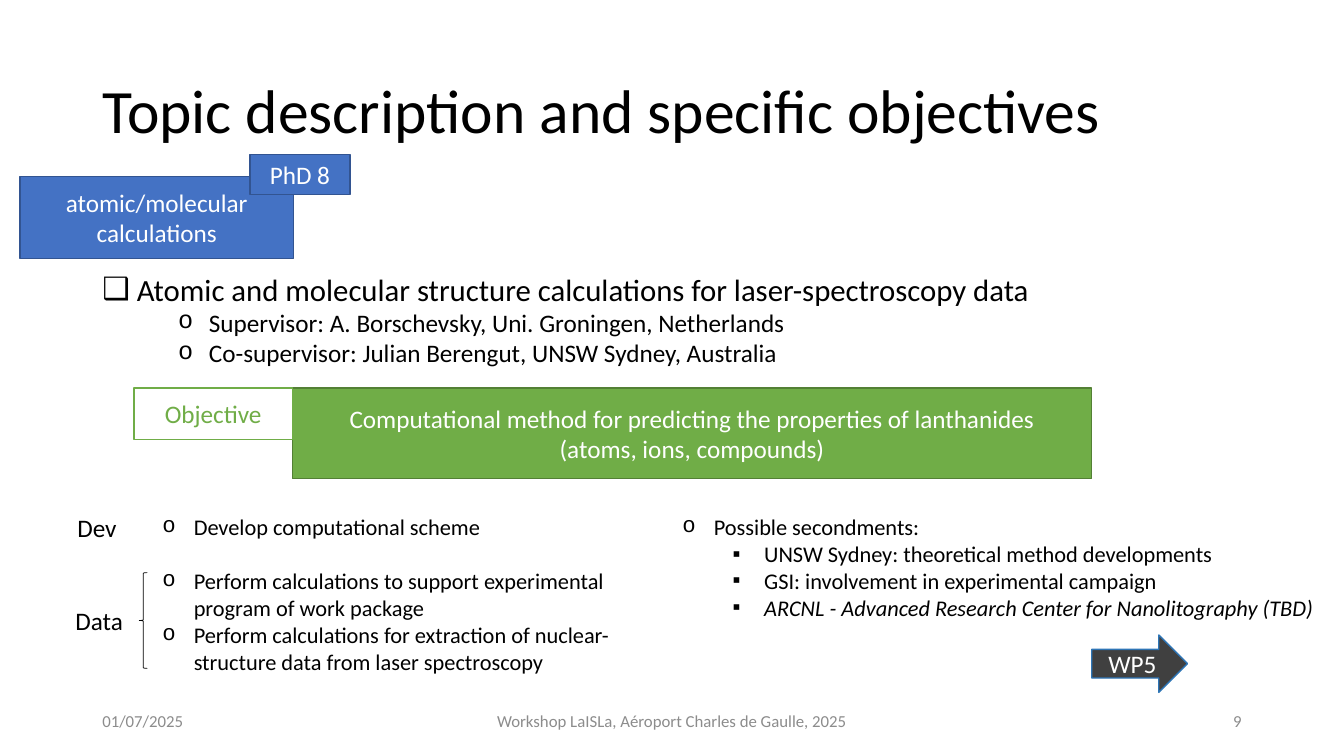
from lxml.etree import SubElement
from pptx import Presentation
from pptx.dml.color import RGBColor
from pptx.enum.shapes import MSO_SHAPE
from pptx.enum.text import MSO_ANCHOR, MSO_AUTO_SIZE, PP_ALIGN
from pptx.oxml.ns import qn
from pptx.util import Pt

BLACK = RGBColor(0x00, 0x00, 0x00)
WHITE = RGBColor(0xFF, 0xFF, 0xFF)
GREY = RGBColor(0x8C, 0x8C, 0x8C)
DARK = RGBColor(0x40, 0x40, 0x40)
BLUE = RGBColor(0x44, 0x72, 0xC4)
NAVY = RGBColor(0x32, 0x54, 0x91)
SKY = RGBColor(0x2E, 0x75, 0xB6)
GREEN = RGBColor(0x70, 0xAD, 0x47)
MOSS = RGBColor(0x53, 0x80, 0x35)

LEFT, CENTER, RIGHT = PP_ALIGN.LEFT, PP_ALIGN.CENTER, PP_ALIGN.RIGHT
TOP, MIDDLE = MSO_ANCHOR.TOP, MSO_ANCHOR.MIDDLE

# Bullet styles: mark, mark font, text indent, hang, text size
HEAD = ("❑", "Arial", 24.5, 24.5, 22)
PERSON = ("o", "Courier New", 76, 22, 18)
ITEM = ("o", "Courier New", 22.5, 22.5, 16)
SUB = ("▪", "Arial", 58.5, 22.5, 16)

TOPIC = [
    (HEAD, "Atomic and molecular structure calculations for laser-spectroscopy data"),
    (PERSON, "Supervisor: A. Borschevsky, Uni. Groningen, Netherlands"),
    (PERSON, "Co-supervisor: Julian Berengut, UNSW Sydney, Australia"),
]
TASKS = [
    (ITEM, "Develop computational scheme"),
    (ITEM, "Perform calculations to support experimental program of work package"),
    (ITEM, "Perform calculations for extraction of nuclear-structure data from laser spectroscopy"),
]
VISITS = [
    (ITEM, "Possible secondments:"),
    (SUB, "UNSW Sydney: theoretical method developments"),
    (SUB, "GSI: involvement in experimental campaign"),
    (SUB, "ARCNL - Advanced Research Center for Nanolitography (TBD)"),
]


def place(shape, box):
    shape.left, shape.top, shape.width, shape.height = map(Pt, box)


def style(para, size, color, align=LEFT):
    para.alignment = align
    para.space_before = Pt(0)
    for run in para.runs:
        font = run.font
        font.name, font.size, font.bold = "Calibri", Pt(size), False
        font.color.rgb = color


def write(shape, text, size, color, align=LEFT, anchor=MIDDLE, wrap=True):
    frame = shape.text_frame
    frame.text = text
    frame.word_wrap = wrap
    frame.auto_size = MSO_AUTO_SIZE.NONE
    frame.vertical_anchor = anchor
    for para in frame.paragraphs:
        style(para, size, color, align)


def add_label(slide, box, text, size=18, color=BLACK, align=LEFT, anchor=MIDDLE, wrap=True):
    label = slide.shapes.add_textbox(*map(Pt, box))
    write(label, text, size, color, align, anchor, wrap)


def add_block(slide, box, text, fill, line, color=WHITE, kind=MSO_SHAPE.RECTANGLE):
    block = slide.shapes.add_shape(kind, *map(Pt, box))
    block.shadow.inherit = False
    block.fill.solid()
    block.fill.fore_color.rgb = fill
    block.line.color.rgb = line
    block.line.width = Pt(1)
    write(block, text, 18, color, CENTER)


def add_brace(slide, box):
    brace = slide.shapes.add_shape(MSO_SHAPE.LEFT_BRACE, *map(Pt, box))
    brace.shadow.inherit = False
    brace.fill.background()
    brace.line.color.rgb = BLACK
    brace.line.width = Pt(0.5)


def set_bullet(para, mark, face, indent, hang):
    props = para._p.get_or_add_pPr()
    props.set("marL", str(Pt(indent)))
    props.set("indent", str(-Pt(hang)))
    SubElement(props, qn("a:buFont"), typeface=face)
    SubElement(props, qn("a:buChar"), char=mark)


def fill_list(holder, box, items):
    place(holder, box)
    frame = holder.text_frame
    frame.text = "\n".join(text for _, text in items)
    frame.word_wrap = True
    frame.auto_size = MSO_AUTO_SIZE.NONE
    frame.vertical_anchor = TOP
    for para, (kind, _) in zip(frame.paragraphs, items):
        *bullet, size = kind
        para.level = 1 if kind in (PERSON, SUB) else 0
        style(para, size, BLACK)
        set_bullet(para, *bullet)
    return frame.paragraphs


def main():
    deck = Presentation()
    deck.slide_width, deck.slide_height = Pt(960), Pt(540)
    slide = deck.slides.add_slide(deck.slide_layouts.get_by_name("Comparison"))
    title, topic, tasks, spare, visits = slide.placeholders
    spare.element.getparent().remove(spare.element)

    place(title, (66, 28.8, 828, 104.4))
    write(title, "Topic description and specific objectives", 44, BLACK)
    title.text_frame.paragraphs[0].line_spacing = 0.9

    fill_list(topic, (66, 189.4, 756.7, 78.5), TOPIC)
    steps = fill_list(tasks, (108.7, 362.9, 371.5, 123.8), TASKS)
    steps[1].space_before = Pt(19.5)
    stays = fill_list(visits, (480.2, 362.9, 467.3, 85), VISITS)
    stays[-1].runs[0].font.italic = True

    add_block(slide, (14.4, 126.2, 195.1, 58.3), "atomic/molecular calculations", BLUE, NAVY)
    add_block(slide, (178.6, 110.2, 71.3, 28.8), "PhD 8", BLUE, NAVY)
    goal = "Computational method for predicting the properties of lanthanides\v(atoms, ions, compounds)"
    add_block(slide, (208.8, 277.2, 571, 64.8), goal, GREEN, MOSS)
    add_block(slide, (95.8, 277.2, 113, 36.7), "Objective", WHITE, GREEN, GREEN)
    add_block(slide, (779.8, 453.6, 68.4, 41), "WP5", DARK, SKY, kind=MSO_SHAPE.RIGHT_ARROW)

    add_brace(slide, (99.4, 409, 5.8, 68.4))
    add_label(slide, (48.2, 362.2, 43.2, 28.8), "Dev", anchor=TOP, wrap=False)
    add_label(slide, (46.8, 429.1, 49, 28.8), "Data", anchor=TOP, wrap=False)

    for left, width, text, align in (
        (66, 216, "01/07/2025", LEFT),
        (318, 324, "Workshop LaISLa, Aéroport Charles de Gaulle, 2025", CENTER),
        (678, 216, "9", RIGHT),
    ):
        add_label(slide, (left, 500.4, width, 28.8), text, 12, GREY, align)

    deck.save("out.pptx")


if __name__ == "__main__":
    main()
